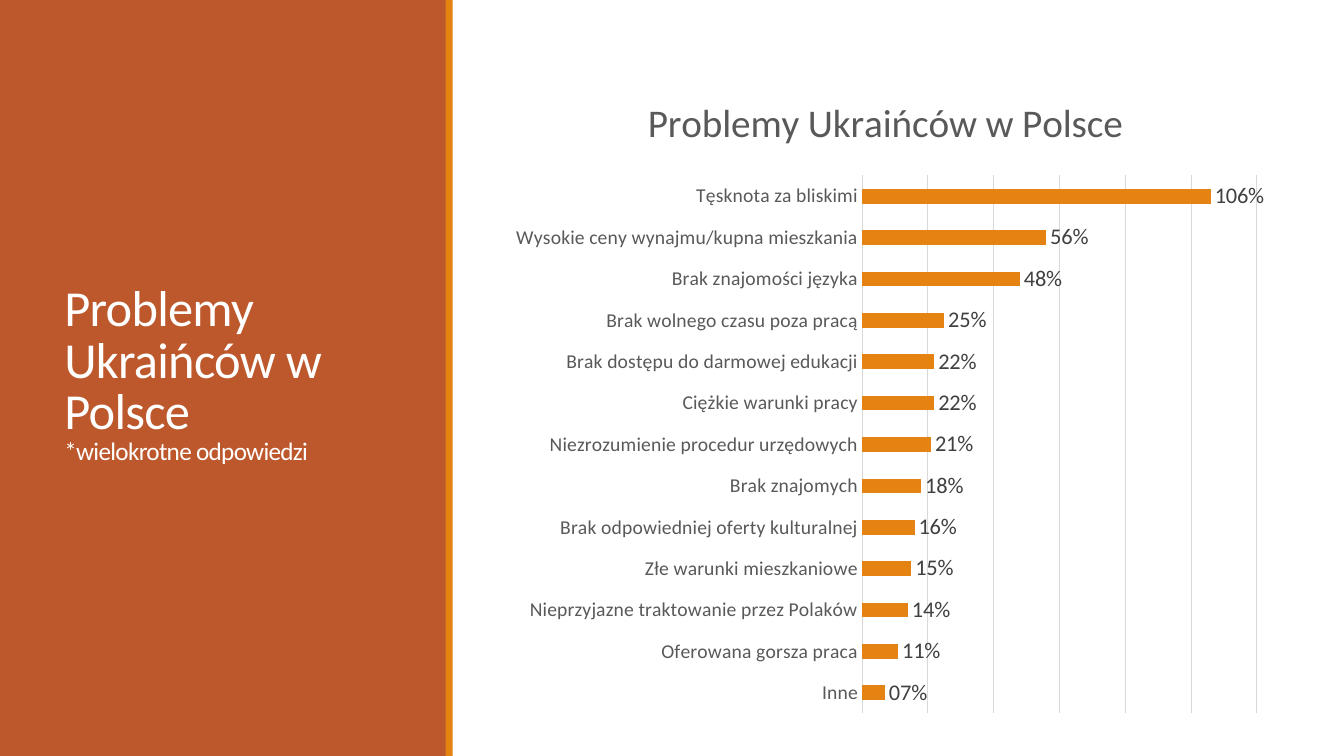
import pptx
import pptx.chart.data
import pptx.dml.color
import pptx.enum.chart
import pptx.enum.shapes
import pptx.enum.text
import pptx.oxml
import pptx.oxml.ns
import pptx.util
from pptx.util import Inches

FONT = "Calibri"
COLORS = {
    "panel": "BD582C",
    "accent": "E48312",
    "white": "FFFFFF",
    "grid": "D9D9D9",
    "axis_text": "595959",
    "label_text": "404040",
}
HEADING = "Problemy Ukraińców w Polsce"
PROBLEMS = {
    "Tęsknota za bliskimi": 1.06,
    "Wysokie ceny wynajmu/kupna mieszkania": 0.56,
    "Brak znajomości języka": 0.48,
    "Brak wolnego czasu poza pracą": 0.25,
    "Brak dostępu do darmowej edukacji": 0.22,
    "Ciężkie warunki pracy": 0.22,
    "Niezrozumienie procedur urzędowych": 0.21,
    "Brak znajomych": 0.18,
    "Brak odpowiedniej oferty kulturalnej": 0.16,
    "Złe warunki mieszkaniowe": 0.15,
    "Nieprzyjazne traktowanie przez Polaków": 0.14,
    "Oferowana gorsza praca": 0.11,
    "Inne": 0.07,
}
PERCENT = "0,0%"


def rgb(name):
    return pptx.dml.color.RGBColor.from_string(COLORS[name])


def style_font(font, size, color):
    font.name = FONT
    font.size = pptx.util.Pt(size)
    font.bold = False
    font.color.rgb = rgb(color)


def style_line(line, color):
    line.color.rgb = rgb(color)
    line.width = pptx.util.Pt(0.75)


def add_band(page, left, width, color):
    """Add a plain rectangle over the full height of the slide."""
    band = page.shapes.add_shape(
        pptx.enum.shapes.MSO_SHAPE.RECTANGLE,
        Inches(left), 0, Inches(width), Inches(7.5))
    band.shadow.inherit = False
    band.fill.solid()
    band.fill.fore_color.rgb = rgb(color)
    band.line.fill.background()


def add_heading(page):
    box = page.shapes.add_textbox(
        Inches(0.54), Inches(0.57), Inches(3.37), Inches(6.31))
    frame = box.text_frame
    frame.word_wrap = True
    frame.vertical_anchor = pptx.enum.text.MSO_ANCHOR.MIDDLE
    para = frame.paragraphs[0]
    para.line_spacing = 0.85
    for text, size in ((HEADING, 36), ("*wielokrotne odpowiedzi", 18)):
        if para.runs:
            para.add_line_break()
        span = para.add_run()
        span.text = text
        style_font(span.font, size, "white")
        span._r.get_or_add_rPr().set("spc", "-50")


def set_plot_area(chart, **fractions):
    """Fix the inner plot area as fractions of the chart frame."""
    plot_area = chart.element.find(".//" + pptx.oxml.ns.qn("c:plotArea"))
    for layout in plot_area.findall(pptx.oxml.ns.qn("c:layout")):
        plot_area.remove(layout)
    sizes = "".join(f'<c:{key} val="{value}"/>' for key, value in fractions.items())
    plot_area.insert(0, pptx.oxml.parse_xml(
        f'<c:layout {pptx.oxml.ns.nsdecls("c")}><c:manualLayout>'
        '<c:layoutTarget val="inner"/><c:xMode val="edge"/><c:yMode val="edge"/>'
        f'{sizes}</c:manualLayout></c:layout>'))


def style_axes(chart):
    categories = chart.category_axis
    categories.reverse_order = True
    categories.major_tick_mark = pptx.enum.chart.XL_TICK_MARK.NONE
    style_font(categories.tick_labels.font, 14, "axis_text")
    style_line(categories.format.line, "grid")
    values = chart.value_axis
    values.visible = False
    values.minimum_scale, values.maximum_scale = 0, 1.2
    values.major_unit = 0.2
    values.has_major_gridlines = True
    style_line(values.major_gridlines.format.line, "grid")


def style_bars(plot):
    plot.gap_width = 182
    plot.vary_by_categories = False
    bars = plot.series[0]
    bars.format.fill.solid()
    bars.format.fill.fore_color.rgb = rgb("accent")
    labels = bars.data_labels
    labels.show_value = True
    labels.position = pptx.enum.chart.XL_LABEL_POSITION.OUTSIDE_END
    labels.number_format = PERCENT
    labels.number_format_is_linked = False
    style_font(labels.font, 16, "label_text")


def add_problem_chart(page):
    data = pptx.chart.data.CategoryChartData(number_format=PERCENT)
    data.categories = list(PROBLEMS)
    data.add_series("Series 1", list(PROBLEMS.values()))
    chart = page.shapes.add_chart(
        pptx.enum.chart.XL_CHART_TYPE.BAR_CLUSTERED,
        Inches(4.94), Inches(0.7), Inches(7.68), Inches(6.51), data).chart
    chart.font.name = FONT
    chart.font.size = pptx.util.Pt(10)
    chart.has_legend = False
    chart.has_title = True
    title = chart.chart_title.text_frame
    title.text = HEADING
    style_font(title.paragraphs[0].font, 28, "axis_text")
    style_axes(chart)
    style_bars(chart.plots[0])
    set_plot_area(chart, x=0.47, y=0.16, w=0.51, h=0.82)


def main():
    deck = pptx.Presentation()
    deck.slide_width, deck.slide_height = Inches(13.33), Inches(7.5)
    page = deck.slides.add_slide(deck.slide_layouts[6])
    add_band(page, 0, 4.43, "panel")
    add_heading(page)
    add_band(page, 4.42, 0.07, "accent")
    add_problem_chart(page)
    deck.save("out.pptx")


if __name__ == "__main__":
    main()
